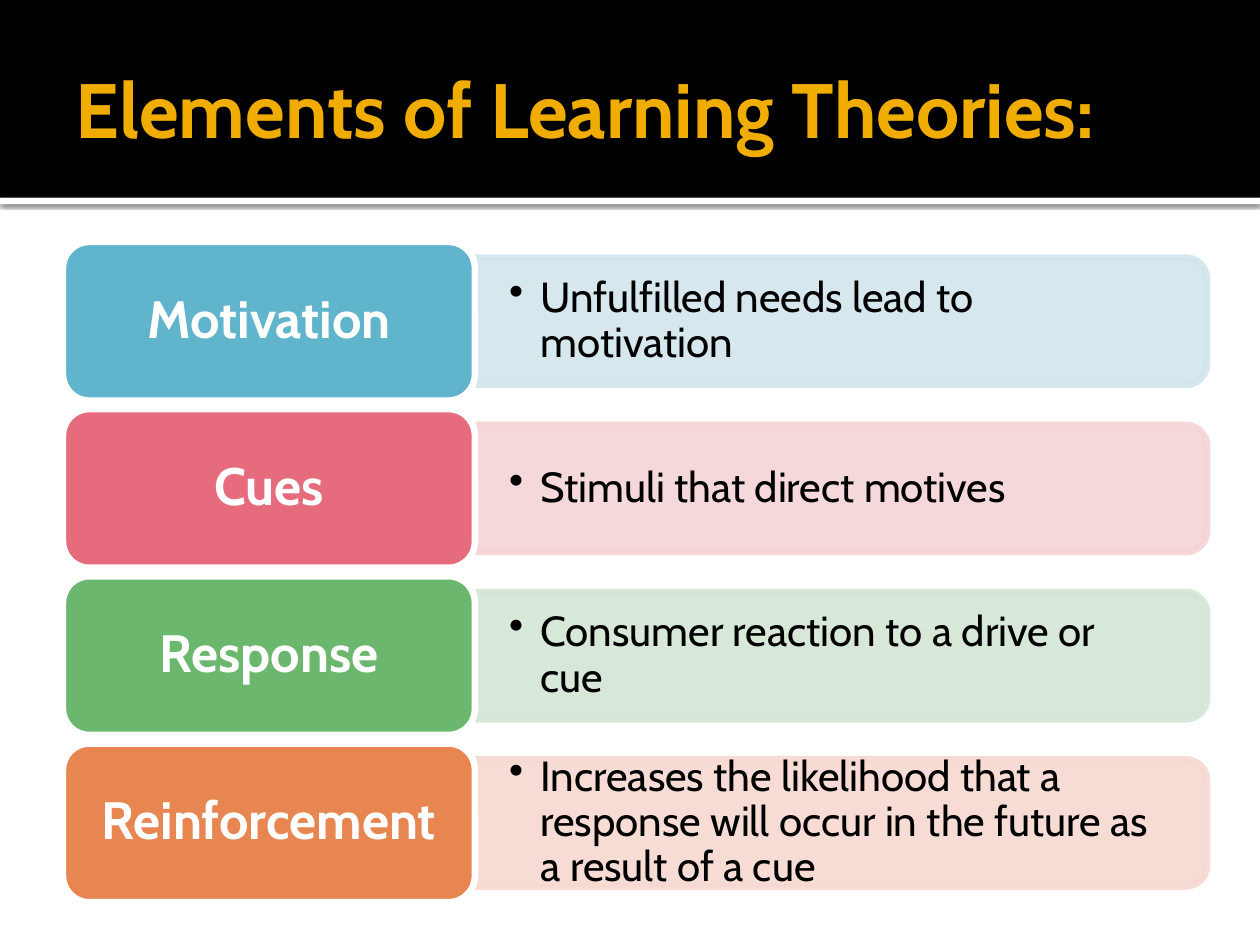
from lxml.etree import SubElement
from pptx import Presentation
from pptx.dml.color import RGBColor
from pptx.enum.shapes import MSO_SHAPE
from pptx.enum.text import MSO_ANCHOR, PP_ALIGN
from pptx.oxml.ns import qn
from pptx.util import Inches, Pt

ROWS = [
    ("Motivation", "Unfulfilled needs lead to motivation", "60B5CC", "D2E5EC"),
    ("Cues", "Stimuli that direct motives", "E66C7D", "F5D4D7"),
    ("Response", "Consumer reaction to a drive or cue", "6BB76D", "D4E6D4"),
    ("Reinforcement", "Increases the likelihood that a response will occur "
     "in the future as a result of a cue", "E88651", "F6D9D0"),
]
TOP, STEP = 1.92, 1.327
LEFT, SPLIT, RIGHT = 0.5, 3.77, 9.58
LABEL_H, PANEL_H = 1.26, 1.01


def rgb(code):
    return RGBColor.from_string(code)


def fade(color, percent):
    """Set the opacity of a solid colour element."""
    SubElement(color, qn("a:alpha"), val=str(percent * 1000))


class Deck:
    font = "Cabin"

    def __init__(self, prs):
        self.slide = prs.slides.add_slide(prs.slide_layouts[5])
        self.shapes = self.slide.shapes

    def box(self, kind, x, y, w, h, fill, line=None):
        shape = self.shapes.add_shape(
            kind, Inches(x), Inches(y), Inches(w), Inches(h))
        shape.shadow.inherit = False
        shape.fill.solid()
        shape.fill.fore_color.rgb = rgb(fill)
        if line:
            shape.line.color.rgb = rgb(line)
            shape.line.width = Pt(3.78)
        else:
            shape.line.fill.background()
        return shape

    def put_text(self, shape, text, size, color, bold=False,
                 align=PP_ALIGN.LEFT, inset=(0.1, 0.05), spacing=0.9):
        frame = shape.text_frame
        frame.word_wrap = True
        frame.vertical_anchor = MSO_ANCHOR.MIDDLE
        frame.margin_left = frame.margin_right = Inches(inset[0])
        frame.margin_top = frame.margin_bottom = Inches(inset[1])
        para = frame.paragraphs[0]
        para.alignment = align
        para.line_spacing = spacing
        run = para.add_run()
        run.text = text
        run.font.name = self.font
        run.font.size = Pt(size)
        run.font.bold = bold
        run.font.color.rgb = rgb(color)
        return para

    def header(self, text):
        rule = self.box(MSO_SHAPE.RECTANGLE, 0, 1.57, 10, 0.05, "FFFFFF")
        effects = rule._element.spPr.find(qn("a:effectLst"))
        shadow = SubElement(effects, qn("a:outerShdw"), blurRad=str(Pt(2.5)),
                            dist=str(Pt(0.8)), dir="5400000", algn="t",
                            rotWithShape="0")
        fade(SubElement(shadow, qn("a:srgbClr"), val="000000"), 60)
        self.box(MSO_SHAPE.RECTANGLE, 0, 0, 10, 1.57, "000000")

        title = self.shapes.title
        title.left, title.top = Inches(0.5), Inches(0.17)
        title.width, title.height = Inches(9), Inches(1.37)
        self.put_text(title, text, 44, "F0AD00", bold=True, spacing=1)
        # Bring the title in front of the band
        title._element.getparent().append(title._element)

    def panel(self, mid, text, tint):
        wide = RIGHT - SPLIT
        # Turned a quarter, so that the rounded corners face right
        shape = self.box(MSO_SHAPE.ROUND_2_SAME_RECTANGLE,
                         (SPLIT + RIGHT - PANEL_H) / 2, mid - wide / 2,
                         PANEL_H, wide, tint, tint)
        shape.rotation = 90
        for color in shape._element.spPr.iter(qn("a:srgbClr")):
            fade(color, 90)
        area = self.shapes.add_textbox(Inches(SPLIT), Inches(mid - 0.455),
                                       Inches(wide - 0.05), Inches(0.91))
        para = self.put_text(area, text, 24, "000000", inset=(0.27, 0.14))
        props = para._p.get_or_add_pPr()
        props.set("marL", str(Inches(0.25)))
        props.set("indent", str(-Inches(0.25)))
        SubElement(props, qn("a:buChar"), char="•")

    def label(self, mid, text, fill):
        shape = self.box(MSO_SHAPE.ROUNDED_RECTANGLE, LEFT, mid - LABEL_H / 2,
                         SPLIT - LEFT, LABEL_H, fill, "FFFFFF")
        self.put_text(shape, text, 30, "FFFFFF", bold=True,
                      align=PP_ALIGN.CENTER, inset=(0.12, 0.06))


def main():
    prs = Presentation()
    prs.slide_width, prs.slide_height = Inches(10), Inches(7.5)
    deck = Deck(prs)
    deck.header("Elements of Learning Theories:")
    for i, (name, text, fill, tint) in enumerate(ROWS):
        mid = TOP + LABEL_H / 2 + i * STEP
        deck.panel(mid, text, tint)
        deck.label(mid, name, fill)
    prs.save("out.pptx")


if __name__ == "__main__":
    main()
